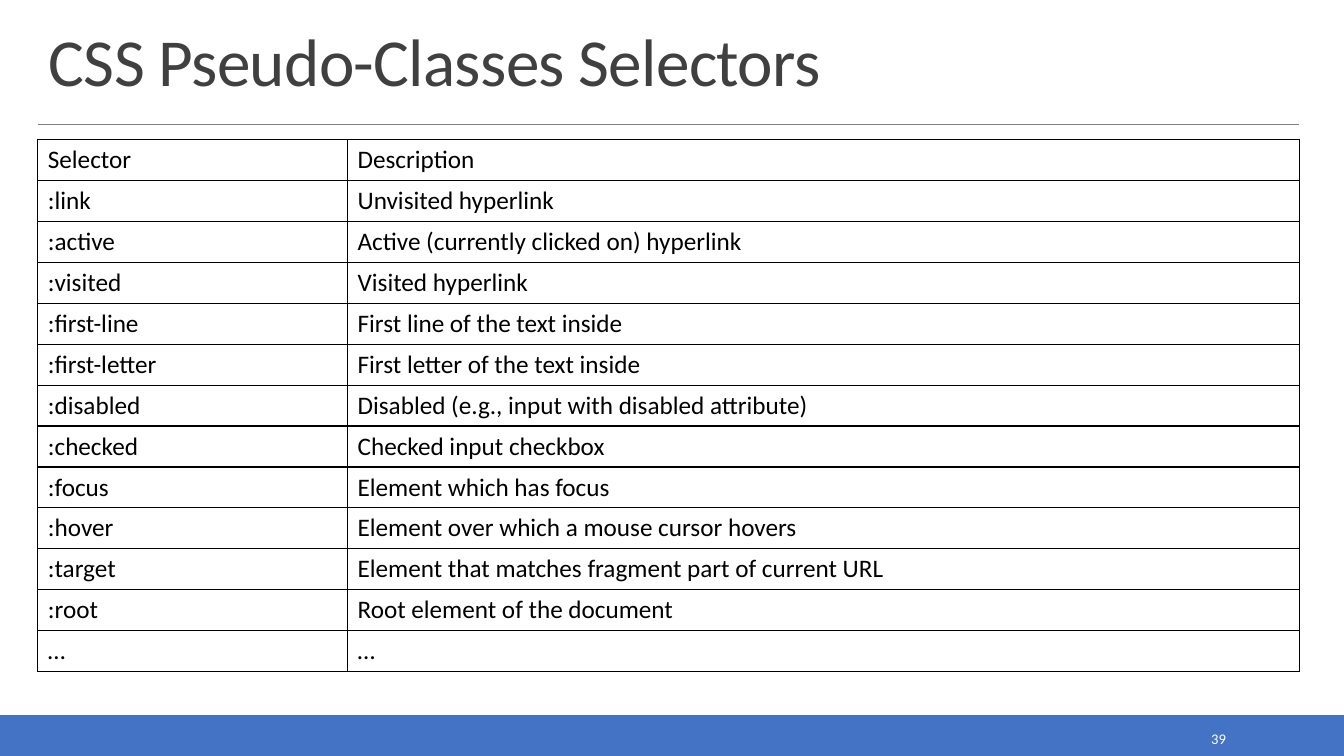
"""Build a slide that lists CSS pseudo-class selectors in a table."""
from lxml import etree
from pptx import Presentation
from pptx.dml.color import RGBColor
from pptx.enum.shapes import MSO_CONNECTOR, MSO_SHAPE
from pptx.enum.text import MSO_ANCHOR, PP_ALIGN
from pptx.oxml.ns import qn
from pptx.util import Pt

EMU_PER_PX = 9525
SLIDE_WIDTH, SLIDE_HEIGHT = 1280, 720
BLANK_LAYOUT = 6
FONT = "Calibri"

WHITE = RGBColor(0xFF, 0xFF, 0xFF)
BLACK = RGBColor(0x00, 0x00, 0x00)
BLUE = RGBColor(0x44, 0x72, 0xC4)
GRAY = RGBColor(0x80, 0x80, 0x80)
DARK_GRAY = RGBColor(0x40, 0x40, 0x40)

RECTANGLE = MSO_SHAPE.RECTANGLE
STRAIGHT = MSO_CONNECTOR.STRAIGHT
LEFT, RIGHT = PP_ALIGN.LEFT, PP_ALIGN.RIGHT
MIDDLE, BOTTOM = MSO_ANCHOR.MIDDLE, MSO_ANCHOR.BOTTOM

COLUMN_WIDTHS = (295, 907)
ROW_HEIGHT = 39
BORDER_WIDTH = Pt(1)
SELECTORS = (
    ("Selector", "Description"),
    (":link", "Unvisited hyperlink"),
    (":active", "Active (currently clicked on) hyperlink"),
    (":visited", "Visited hyperlink"),
    (":first-line", "First line of the text inside"),
    (":first-letter", "First letter of the text inside"),
    (":disabled", "Disabled (e.g., input with disabled attribute)"),
    (":checked", "Checked input checkbox"),
    (":focus", "Element which has focus"),
    (":hover", "Element over which a mouse cursor hovers"),
    (":target", "Element that matches fragment part of current URL"),
    (":root", "Root element of the document"),
    ("…", "…"),
)


def px(*lengths):
    """Turn pixel lengths into a list of EMU lengths."""
    return [length * EMU_PER_PX for length in lengths]


def style_paragraph(paragraph, size, color):
    """Set the font of a whole paragraph."""
    paragraph.font.name = FONT
    paragraph.font.size = Pt(size)
    paragraph.font.color.rgb = color


def add_text(slide, box, text, size, color, anchor, alignment=LEFT):
    """Add a one-paragraph text box and return its paragraph."""
    frame = slide.shapes.add_textbox(*px(*box)).text_frame
    frame.word_wrap = True
    frame.vertical_anchor = anchor
    paragraph = frame.paragraphs[0]
    paragraph.text = text
    paragraph.alignment = alignment
    style_paragraph(paragraph, size, color)
    return paragraph


def add_title(slide, box, text):
    """Add the slide title with tight line and letter spacing."""
    paragraph = add_text(slide, box, text, 48, DARK_GRAY, BOTTOM)
    paragraph.line_spacing = 0.85
    paragraph.runs[0].font.language_id = None
    paragraph.runs[0]._r.get_or_add_rPr().set("spc", "-50")


def add_band(slide, box):
    """Add the coloured footer band."""
    band = slide.shapes.add_shape(RECTANGLE, *px(*box))
    band.shadow.inherit = False
    band.fill.solid()
    band.fill.fore_color.rgb = BLUE
    band.line.color.rgb = BLUE
    band.line.width = Pt(1.25)


def add_rule(slide, ends):
    """Add the thin line below the title."""
    rule = slide.shapes.add_connector(STRAIGHT, *px(*ends))
    rule.line.color.rgb = GRAY
    rule.line.width = Pt(0.5)
    etree.SubElement(rule._element.spPr, qn("a:effectLst"))


def add_borders(cell):
    """Draw a black border on each side of a cell."""
    properties = cell._tc.get_or_add_tcPr()
    for position, side in enumerate(("a:lnL", "a:lnR", "a:lnT", "a:lnB")):
        border = etree.Element(qn(side), w=str(BORDER_WIDTH))
        fill = etree.SubElement(border, qn("a:solidFill"))
        etree.SubElement(fill, qn("a:srgbClr"), val=str(BLACK))
        properties.insert(position, border)


def add_selector_table(slide, left, top):
    """Add the bordered table of selectors and descriptions."""
    box = (left, top, sum(COLUMN_WIDTHS), ROW_HEIGHT * len(SELECTORS))
    table = slide.shapes.add_table(
        len(SELECTORS), len(COLUMN_WIDTHS), *px(*box)).table
    table.first_row = False
    table.horz_banding = False
    for column, width in zip(table.columns, px(*COLUMN_WIDTHS)):
        column.width = width
    for row, texts in zip(table.rows, SELECTORS):
        for cell, text in zip(row.cells, texts):
            cell.text = text
            cell.fill.background()
            style_paragraph(cell.text_frame.paragraphs[0], 18, BLACK)
            add_borders(cell)


def main():
    """Build and save the presentation."""
    presentation = Presentation()
    presentation.slide_width, presentation.slide_height = px(
        SLIDE_WIDTH, SLIDE_HEIGHT)
    slide = presentation.slides.add_slide(
        presentation.slide_layouts[BLANK_LAYOUT])
    add_band(slide, (0, 682, SLIDE_WIDTH, 38))
    add_rule(slide, (36, 118, 1237, 118))
    add_title(slide, (37, 19, 1202, 81), "CSS Pseudo-Classes Selectors")
    add_selector_table(slide, 36, 133)
    add_text(slide, (1040, 690, 137, 27), "39", 10.5, WHITE, MIDDLE, RIGHT)
    presentation.save("out.pptx")


if __name__ == "__main__":
    main()
